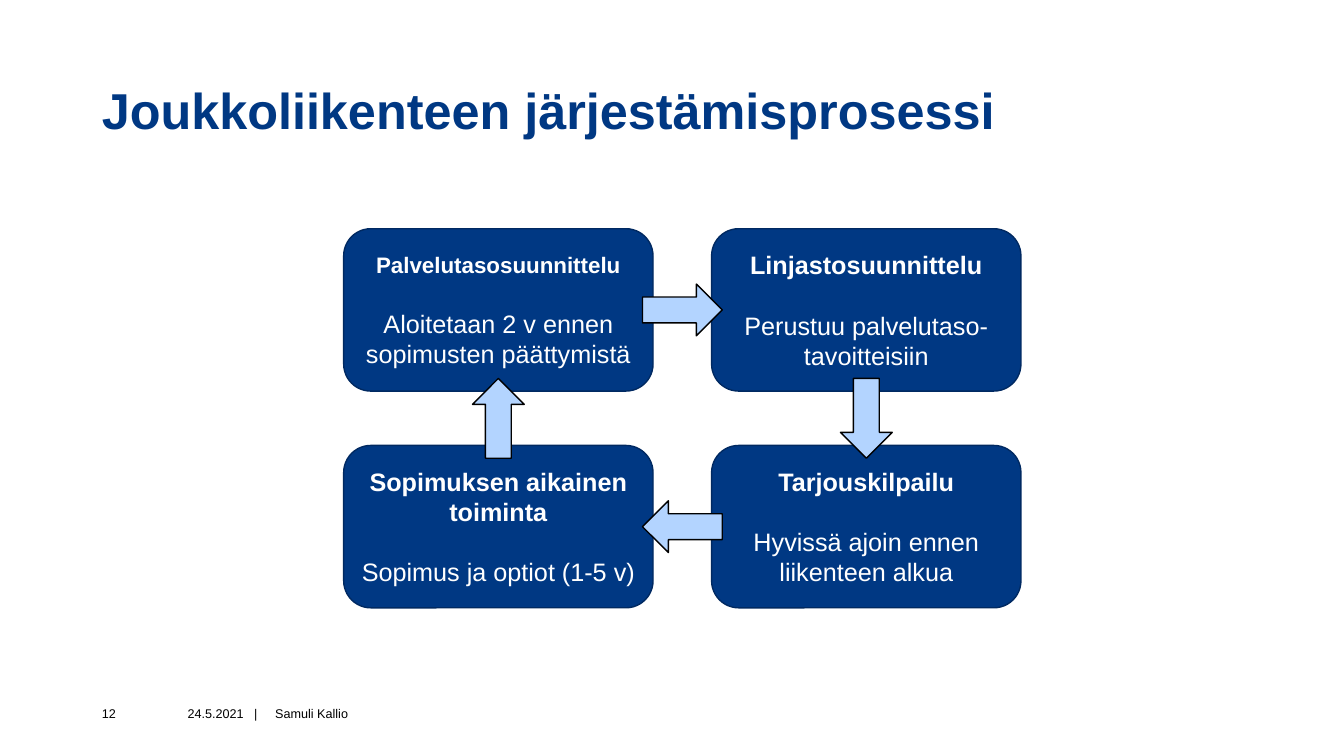
"""Build a slide showing the four-step cycle of arranging public transport."""
from dataclasses import dataclass

from lxml import etree
from pptx import Presentation
from pptx.dml.color import RGBColor
from pptx.enum.shapes import MSO_SHAPE
from pptx.enum.text import MSO_ANCHOR, MSO_AUTO_SIZE, PP_ALIGN
from pptx.oxml.ns import qn
from pptx.util import Pt

ROUND_RECT = MSO_SHAPE.ROUNDED_RECTANGLE
ARROW = MSO_SHAPE.RIGHT_ARROW
MIDDLE = MSO_ANCHOR.MIDDLE
NO_FIT = MSO_AUTO_SIZE.NONE
LEFT, CENTER = PP_ALIGN.LEFT, PP_ALIGN.CENTER


@dataclass(frozen=True)
class Theme:
    font: str = "Arial"
    navy: str = "003883"
    navy_line: str = "002961"
    sky: str = "B3D4FF"
    black: str = "000000"
    white: str = "FFFFFF"
    title: int = 36
    body: int = 18
    small_head: int = 16
    footer: int = 9


THEME = Theme()
BOX_W, BOX_H = 221, 116
COLS, ROWS = (245.5, 508.3), (163.4, 318.2)
ARROW_W, ARROW_H = 57, 37

STEPS = [
    (0, 0, "Palvelutasosuunnittelu", THEME.small_head,
     "Aloitetaan 2 v ennen sopimusten päättymistä"),
    (1, 0, "Linjastosuunnittelu", THEME.body,
     "Perustuu palvelutaso-tavoitteisiin"),
    (1, 1, "Tarjouskilpailu", THEME.body,
     "Hyvissä ajoin ennen liikenteen alkua"),
    (0, 1, "Sopimuksen aikainen toiminta", THEME.body,
     "Sopimus ja optiot (1-5 v)"),
]


def style_paragraph(p, size, color, bold=False, align=LEFT):
    """Format a paragraph and its runs."""
    p.alignment = align
    for r in p.runs:
        r.font.name = THEME.font
        r.font.size = Pt(size)
        r.font.bold = bold
        r.font.color.rgb = RGBColor.from_string(color)


def set_frame(tf, margin=0):
    """Give a text frame wrapping, middle anchoring and no side margins."""
    tf.word_wrap = True
    tf.auto_size = NO_FIT
    tf.vertical_anchor = MIDDLE
    tf.margin_left = Pt(margin)
    tf.margin_right = tf.margin_top = tf.margin_bottom = 0


def add_title(slide, text):
    """Fill and place the title placeholder."""
    sp = slide.shapes.title
    sp.left, sp.top, sp.width, sp.height = Pt(72.7), Pt(36.7), Pt(837.4), Pt(87.8)
    tf = sp.text_frame
    tf.text = text
    set_frame(tf)
    p = tf.paragraphs[0]
    p.line_spacing = 0.9
    style_paragraph(p, THEME.title, THEME.navy, bold=True)


def add_footer(slide, text, left, width, margin=0, tab=None):
    """Add a footer text, with an optional tab stop."""
    sp = slide.shapes.add_textbox(Pt(left), Pt(501.8), Pt(width), Pt(15.8))
    tf = sp.text_frame
    tf.text = text
    set_frame(tf, margin)
    p = tf.paragraphs[0]
    if tab:
        tabs = etree.SubElement(p._p.get_or_add_pPr(), qn("a:tabLst"))
        etree.SubElement(tabs, qn("a:tab"), pos=str(Pt(tab)), algn="l")
    style_paragraph(p, THEME.footer, THEME.black)


def add_block(slide, kind, left, top, width, height, fill, line):
    """Add a filled and outlined shape without a shadow."""
    sp = slide.shapes.add_shape(kind, Pt(left), Pt(top), Pt(width), Pt(height))
    sp.shadow.inherit = False
    sp.fill.solid()
    sp.fill.fore_color.rgb = RGBColor.from_string(fill)
    sp.line.color.rgb = RGBColor.from_string(line)
    sp.line.width = Pt(1)
    return sp


def add_step(slide, col, row, heading, heading_size, detail):
    """Add one step of the cycle with its heading and detail."""
    sp = add_block(slide, ROUND_RECT, COLS[col], ROWS[row], BOX_W, BOX_H,
                   THEME.navy, THEME.navy_line)
    tf = sp.text_frame
    tf.word_wrap = True
    tf.vertical_anchor = MIDDLE
    tf.text = heading
    style_paragraph(tf.paragraphs[0], heading_size, THEME.white, True, CENTER)
    p = tf.add_paragraph()
    p.text = detail
    p.space_before = Pt(21.5)
    style_paragraph(p, THEME.body, THEME.white, align=CENTER)


def add_arrow(slide, center_x, center_y, rotation):
    """Add an arrow around a centre point."""
    sp = add_block(slide, ARROW, center_x - ARROW_W / 2, center_y - ARROW_H / 2,
                   ARROW_W, ARROW_H, THEME.sky, THEME.black)
    sp.rotation = rotation


def main():
    """Build and save the slide."""
    prs = Presentation()
    prs.slide_width, prs.slide_height = Pt(960), Pt(540)
    slide = prs.slides.add_slide(prs.slide_layouts[5])
    add_title(slide, "Joukkoliikenteen järjestämisprosessi")
    add_footer(slide, "12", 72.7, 38)
    add_footer(slide, "24.5.2021\t|", 114.5, 77, margin=19.5, tab=47.5)
    add_footer(slide, "Samuli Kallio", 196.6, 324)

    for step in STEPS:
        add_step(slide, *step)

    x_left, x_right = (x + BOX_W / 2 for x in COLS)
    y_top, y_bottom = (y + BOX_H / 2 for y in ROWS)
    x_mid, y_mid = (x_left + x_right) / 2, (y_top + y_bottom) / 2
    add_arrow(slide, x_mid, y_top, 0)
    add_arrow(slide, x_mid, y_bottom, 180)
    add_arrow(slide, x_right, y_mid, 90)
    add_arrow(slide, x_left, y_mid, 270)
    prs.save("out.pptx")


if __name__ == "__main__":
    main()
